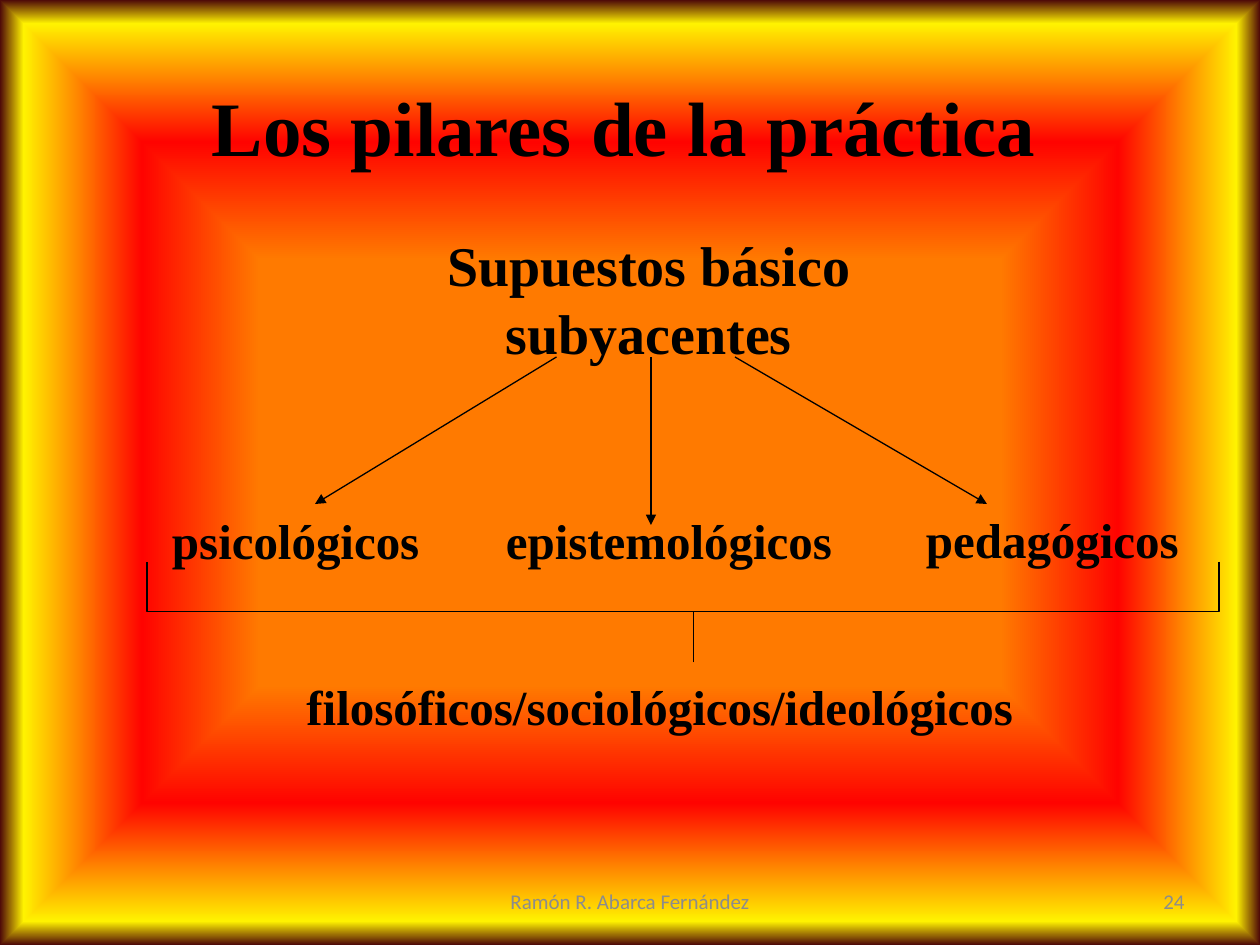
from lxml.etree import SubElement
from pptx import Presentation
from pptx.dml.color import RGBColor
from pptx.enum.shapes import MSO_CONNECTOR, MSO_SHAPE
from pptx.enum.text import MSO_ANCHOR, PP_ALIGN
from pptx.oxml import parse_xml
from pptx.oxml.ns import nsdecls, qn
from pptx.util import Inches, Pt

BLACK = RGBColor(0x00, 0x00, 0x00)
GRAY = RGBColor(0x8C, 0x8C, 0x8C)
ORANGE = RGBColor(0xFF, 0x7A, 0x00)
RED = RGBColor(0xFF, 0x03, 0x00)
YELLOW = RGBColor(0xFF, 0xF2, 0x00)
MAROON = RGBColor(0x4D, 0x08, 0x08)
GLOW = [(0, ORANGE), (45, ORANGE), (70, RED), (95, YELLOW), (100, MAROON)]
COLS, ROWS = 120, 90


class Canvas:
    serif, sans = "Times New Roman", "Calibri"
    line_width = Pt(0.75)

    def __init__(self, prs):
        self.s = prs.slides.add_slide(prs.slide_layouts[6])
        self.col = prs.slide_width / COLS
        self.row = prs.slide_height / ROWS

    def grid(self, x, y):
        return round(x * self.col), round(y * self.row)

    def background(self, stops):
        gs = "".join(
            f'<a:gs pos="{pos * 1000}"><a:srgbClr val="{color}"/></a:gs>'
            for pos, color in stops
        )
        bg = parse_xml(
            f'<p:bg {nsdecls("p", "a")}><p:bgPr><a:gradFill rotWithShape="1">'
            f'<a:gsLst>{gs}</a:gsLst><a:path path="rect">'
            '<a:fillToRect l="50000" t="50000" r="50000" b="50000"/></a:path>'
            "</a:gradFill><a:effectLst/></p:bgPr></p:bg>"
        )
        self.s._element.cSld.insert(0, bg)

    def text(self, words, x, y, w, h, size=28, align=PP_ALIGN.LEFT, wrap=False):
        return self._text(words, (x, y, w, h), size, align, wrap,
                          self.serif, BLACK, True, MSO_ANCHOR.TOP)

    def footer(self, words, x, w, align):
        return self._text(words, (x, 83.4, w, 4.8), 12, align, True,
                          self.sans, GRAY, False, MSO_ANCHOR.MIDDLE)

    def _text(self, words, box, size, align, wrap, font, color, bold, anchor):
        x, y, w, h = box
        tf = self.s.shapes.add_textbox(*self.grid(x, y), *self.grid(w, h)).text_frame
        tf.word_wrap = wrap
        tf.vertical_anchor = anchor
        p = tf.paragraphs[0]
        p.alignment = align
        r = p.add_run()
        r.text = words
        r.font.name, r.font.size, r.font.bold = font, Pt(size), bold
        r.font.color.rgb = color
        return tf

    def arrow(self, x1, y1, x2, y2):
        c = self.s.shapes.add_connector(
            MSO_CONNECTOR.STRAIGHT, *self.grid(x1, y1), *self.grid(x2, y2)
        )
        c.line.color.rgb = BLACK
        c.line.width = self.line_width
        SubElement(c.line._get_or_add_ln(), qn("a:tailEnd"), type="triangle")
        SubElement(c._element.spPr, qn("a:effectLst"))

    def brace(self, x, y, w, h, point):
        left, top = x + (w - h) / 2, y + (h - w) / 2
        sp = self.s.shapes.add_shape(
            MSO_SHAPE.RIGHT_BRACE, *self.grid(left, top), *self.grid(h, w)
        )
        sp.rotation = 90
        sp.adjustments[0], sp.adjustments[1] = 0, point
        sp.shadow.inherit = False
        sp.fill.background()
        sp.line.color.rgb = BLACK
        sp.line.width = self.line_width


def main():
    prs = Presentation()
    prs.slide_width, prs.slide_height = Inches(10), Inches(7.5)
    c = Canvas(prs)
    c.background(GLOW)

    c.text("Los pilares de la práctica", 19, 7, 81, 10, 44)
    premise = c.text("Supuestos básico subyacentes", 27.1, 21.4, 69.4, 7.6,
                     32, PP_ALIGN.CENTER, True)
    premise.margin_left = premise.margin_right = Inches(0.3)

    for x1, x2, y2 in [(62, 62, 50), (70, 94, 48), (53, 30, 48)]:
        c.arrow(x1, 34, x2, y2)

    for words, x, y, w in [
        ("psicológicos", 15.2, 48, 27.5),
        ("epistemológicos", 47, 48, 33.5),
        ("pedagógicos", 87, 47.9, 26.5),
        ("filosóficos/sociológicos/ideológicos", 28, 63.8, 69.7),
    ]:
        c.text(words, x, y, w, 6.8, wrap=words == "psicológicos")
    c.brace(14, 53.5, 102.1, 9.5, 0.49)

    c.footer("24", 86, 28, PP_ALIGN.RIGHT)
    c.footer("Ramón R. Abarca Fernández", 41, 38, PP_ALIGN.CENTER)
    prs.save("out.pptx")


if __name__ == "__main__":
    main()
